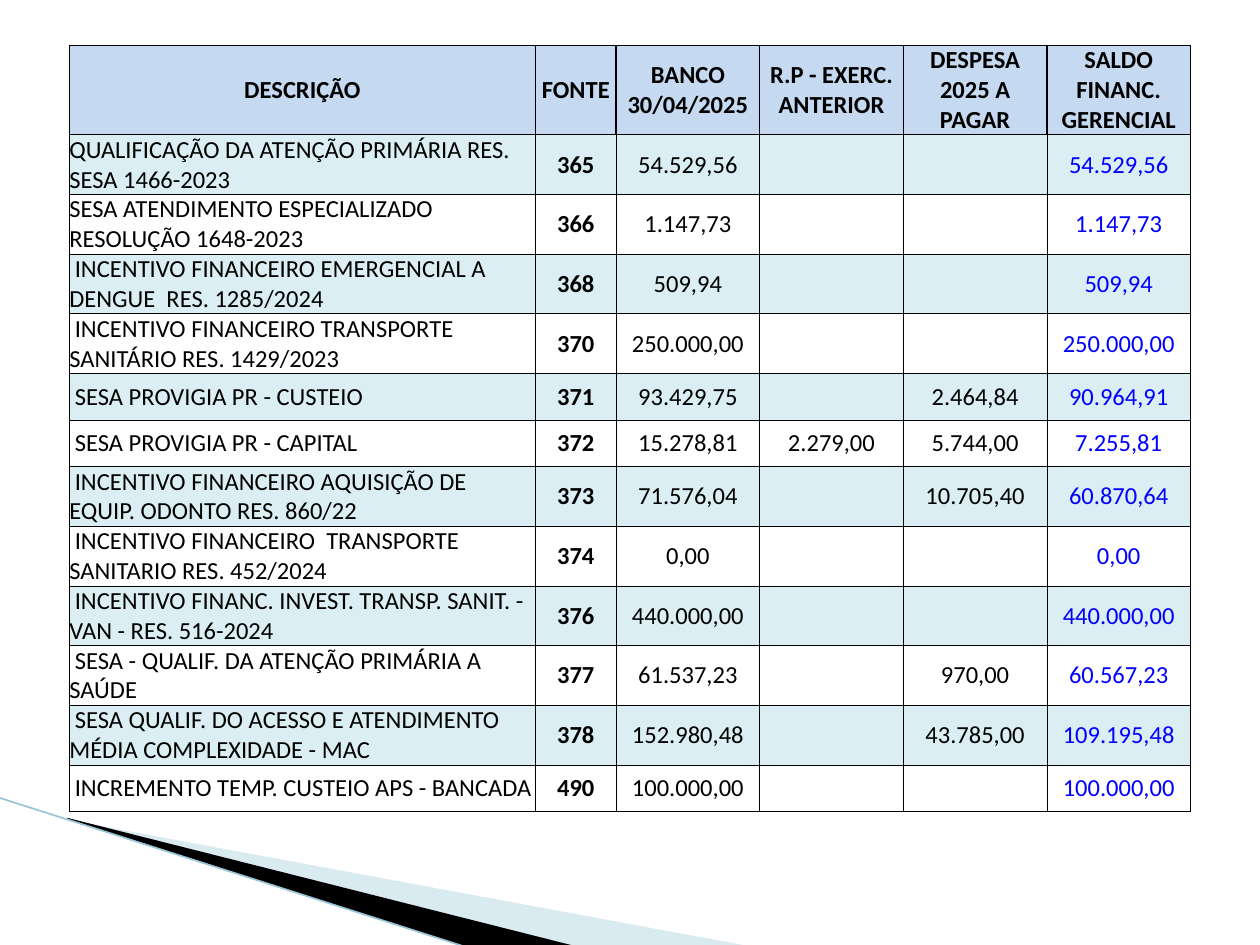
from dataclasses import dataclass

from lxml.etree import SubElement
from pptx import Presentation
from pptx.dml.color import RGBColor
from pptx.enum.shapes import MSO_CONNECTOR
from pptx.enum.text import MSO_ANCHOR, PP_ALIGN
from pptx.oxml.ns import qn
from pptx.util import Inches, Pt

# One grid unit is a hundredth of the slide's width: 100 columns by 75 rows.
COLUMNS, ROWS = 100, 75
UNIT = Inches(10) / COLUMNS


@dataclass(frozen=True)
class Theme:
    font: str = "Calibri"
    text_size: float = 14
    text: str = "000000"
    balance: str = "0000FF"
    header: str = "C5D9F1"
    band: str = "DAEEF3"
    plain: str = "FFFFFF"
    grid: str = "000000"
    thin: float = 0.5
    thick: float = 1
    light_wedge: str = "A0CBDC"
    light_opacity: int = 40
    dark_wedge: str = "000000"
    edge: str = "97C5D8"
    edge_width: float = 0.95


THEME = Theme()

HEADINGS = ("DESCRIÇÃO", "FONTE", "BANCO 30/04/2025", "R.P - EXERC. ANTERIOR",
            "DESPESA 2025 A PAGAR", "SALDO FINANC. GERENCIAL")
FUNDS = (
    ("QUALIFICAÇÃO DA ATENÇÃO PRIMÁRIA RES. SESA 1466-2023", "365", "54.529,56", "", "", "54.529,56"),
    ("SESA ATENDIMENTO ESPECIALIZADO RESOLUÇÃO 1648-2023", "366", "1.147,73", "", "", "1.147,73"),
    (" INCENTIVO FINANCEIRO EMERGENCIAL A DENGUE  RES. 1285/2024", "368", "509,94", "", "", "509,94"),
    (" INCENTIVO FINANCEIRO TRANSPORTE SANITÁRIO RES. 1429/2023", "370", "250.000,00", "", "", "250.000,00"),
    (" SESA PROVIGIA PR - CUSTEIO", "371", "93.429,75", "", "2.464,84", "90.964,91"),
    (" SESA PROVIGIA PR - CAPITAL", "372", "15.278,81", "2.279,00", "5.744,00", "7.255,81"),
    (" INCENTIVO FINANCEIRO AQUISIÇÃO DE EQUIP. ODONTO RES. 860/22", "373", "71.576,04", "", "10.705,40",
     "60.870,64"),
    (" INCENTIVO FINANCEIRO  TRANSPORTE SANITARIO RES. 452/2024", "374", "0,00", "", "", "0,00"),
    (" INCENTIVO FINANC. INVEST. TRANSP. SANIT. - VAN - RES. 516-2024", "376", "440.000,00", "", "",
     "440.000,00"),
    (" SESA - QUALIF. DA ATENÇÃO PRIMÁRIA A SAÚDE", "377", "61.537,23", "", "970,00", "60.567,23"),
    (" SESA QUALIF. DO ACESSO E ATENDIMENTO MÉDIA COMPLEXIDADE - MAC", "378", "152.980,48", "", "43.785,00",
     "109.195,48"),
    (" INCREMENTO TEMP. CUSTEIO APS - BANCADA", "490", "100.000,00", "", "", "100.000,00"),
)
COLUMN_WEIGHTS = (37, 6.4, 11.4, 11.4, 11.4, 11.4)
ROW_WEIGHTS = (5.7,) + (3.7,) * len(FUNDS)
DESCRIPTION, SOURCE, BALANCE = 0, 1, len(HEADINGS) - 1


def units(count):
    return round(count * UNIT)


def rgb(code):
    return RGBColor.from_string(code)


def draw_borders(cell, widths):
    """Give the cell a solid border for each side tag in widths (points)."""
    properties = cell._tc.get_or_add_tcPr()
    for position, (side, width) in enumerate(widths.items()):
        border = SubElement(properties, qn(f"a:{side}"), w=str(Pt(width)))
        properties.insert(position, border)
        paint = SubElement(border, qn("a:solidFill"))
        SubElement(paint, qn("a:srgbClr"), val=THEME.grid)


def fill_cell(cell, words, row, column):
    heading = row == 0
    layout = {"margin_left": 0, "margin_right": 0, "margin_top": 0, "margin_bottom": 0,
              "vertical_anchor": MSO_ANCHOR.MIDDLE}
    for attribute, value in layout.items():
        setattr(cell, attribute, value)

    cell.fill.solid()
    cell.fill.fore_color.rgb = rgb(THEME.header if heading else THEME.band if row % 2 else THEME.plain)
    draw_borders(cell, {
        "lnL": THEME.thick if heading or column == DESCRIPTION else THEME.thin,
        "lnR": THEME.thick if heading or column == BALANCE else THEME.thin,
        "lnT": THEME.thick if heading else THEME.thin,
        "lnB": THEME.thin,
    })

    if not words:
        return
    paragraph = cell.text_frame.paragraphs[0]
    left_aligned = column == DESCRIPTION and not heading
    paragraph.alignment = PP_ALIGN.LEFT if left_aligned else PP_ALIGN.CENTER
    run = paragraph.add_run()
    run.text = words
    style = {"name": THEME.font, "size": Pt(THEME.text_size), "bold": heading or column == SOURCE}
    for attribute, value in style.items():
        setattr(run.font, attribute, value)
    run.font.color.rgb = rgb(THEME.balance if column == BALANCE and not heading else THEME.text)


def add_funds_table(slide, left, top, width, height):
    records = (HEADINGS,) + FUNDS
    table = slide.shapes.add_table(len(records), len(HEADINGS), *map(units, (left, top, width, height))).table
    for flag in ("first_row", "horz_banding"):
        setattr(table, flag, False)
    for column, weight in zip(table.columns, COLUMN_WEIGHTS):
        column.width = units(width * weight / sum(COLUMN_WEIGHTS))
    for row, weight in zip(table.rows, ROW_WEIGHTS):
        row.height = units(height * weight / sum(ROW_WEIGHTS))
    for row, record in enumerate(records):
        for column, words in enumerate(record):
            fill_cell(table.cell(row, column), words, row, column)


def add_wedge(slide, points, color, opacity=100):
    start, *rest = [(units(x), units(y)) for x, y in points]
    builder = slide.shapes.build_freeform(*start)
    builder.add_line_segments(rest, close=True)
    wedge = builder.convert_to_shape()
    wedge.shadow.inherit = False
    wedge.line.fill.background()
    wedge.fill.solid()
    wedge.fill.fore_color.rgb = rgb(color)
    if opacity < 100:
        tone = wedge.fill._xPr.find(qn("a:solidFill"))[0]
        SubElement(tone, qn("a:alpha"), val=str(opacity * 1000))


def add_corner_swoosh(slide, left, top, width, height):
    """Place two wedges and an edge line falling across the lower left corner."""
    def at(x, y):
        return left + x, top + y

    floor = height - 0.1
    light = (at(5.6, 1.8), at(width, floor), at(45.7, floor), at(5.6, 1.7))
    dark = (at(5.4, 1.6), at(45.8, floor), at(37.3, height), at(5.5, 1.7))
    add_wedge(slide, light, THEME.light_wedge, THEME.light_opacity)
    add_wedge(slide, dark, THEME.dark_wedge)

    ends = at(0, 0) + at(37.2, height)
    edge = slide.shapes.add_connector(MSO_CONNECTOR.STRAIGHT, *map(units, ends))
    edge.line.color.rgb = rgb(THEME.edge)
    edge.line.width = Pt(THEME.edge_width)
    SubElement(edge._element.spPr, qn("a:effectLst"))


def main():
    deck = Presentation()
    deck.slide_width, deck.slide_height = units(COLUMNS), units(ROWS)
    slide = deck.slides.add_slide(deck.slide_layouts[6])
    add_corner_swoosh(slide, left=-0.1, top=63.3, width=59.6, height=11.9)
    add_funds_table(slide, left=5.5, top=3.6, width=sum(COLUMN_WEIGHTS), height=sum(ROW_WEIGHTS))
    deck.save("out.pptx")


if __name__ == "__main__":
    main()
